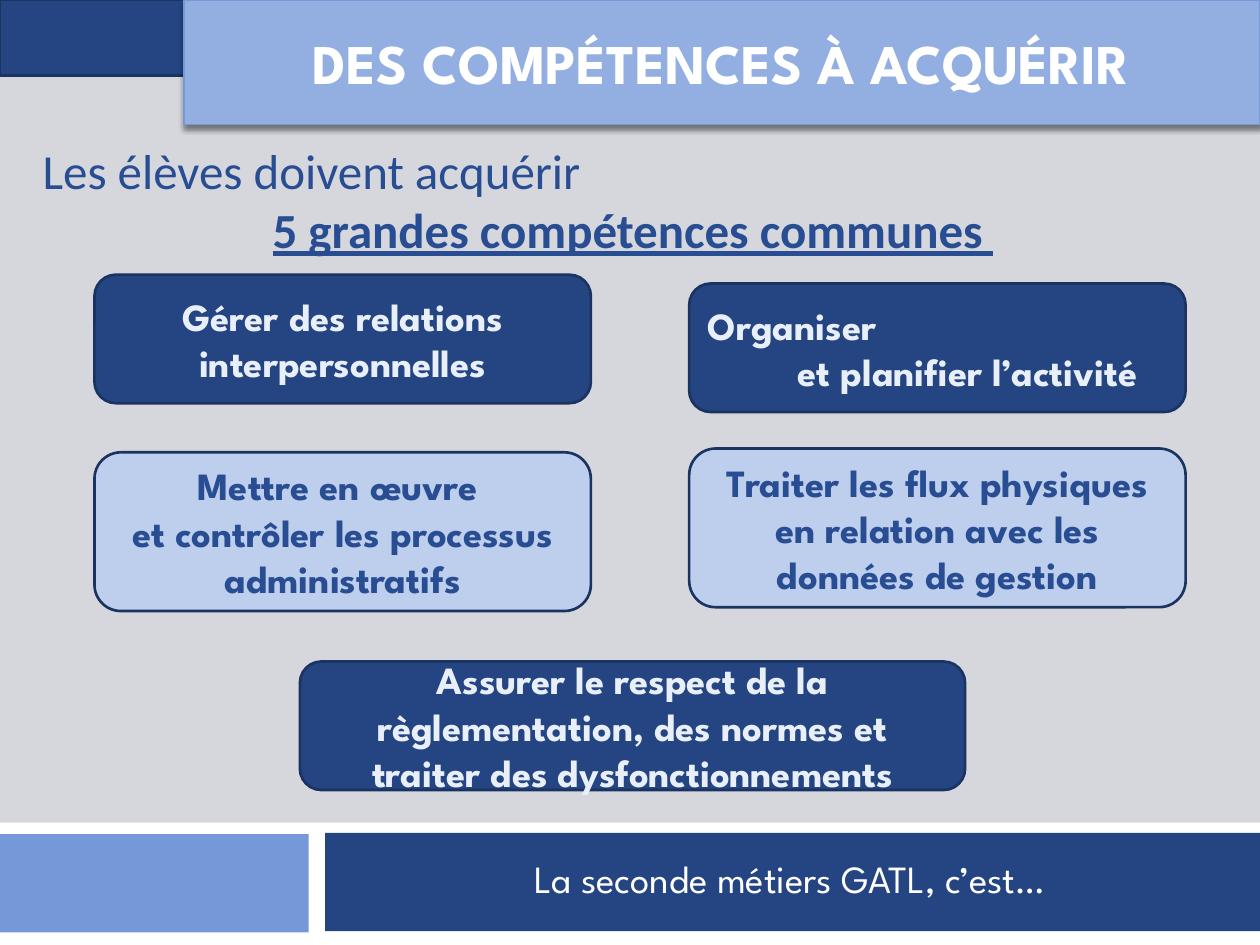
import pptx
import pptx.util
import pptx.dml.color
import pptx.enum.shapes
import pptx.enum.text
import pptx.oxml
import pptx.oxml.ns

Inches = pptx.util.Inches
Pt = pptx.util.Pt
RGBColor = pptx.dml.color.RGBColor
SHAPE = pptx.enum.shapes.MSO_SHAPE
ALIGN = pptx.enum.text.PP_ALIGN
ANCHOR = pptx.enum.text.MSO_ANCHOR
FIT = pptx.enum.text.MSO_AUTO_SIZE

GREY = RGBColor(0xD5, 0xD7, 0xDD)
WHITE = RGBColor(0xFF, 0xFF, 0xFF)
NAVY = RGBColor(0x24, 0x45, 0x82)
EDGE = RGBColor(0x1B, 0x33, 0x60)
SKY = RGBColor(0x75, 0x98, 0xD9)
LIGHT = RGBColor(0x93, 0xAF, 0xE1)
PALE = RGBColor(0xBE, 0xCE, 0xED)
INK = RGBColor(0x28, 0x4D, 0x92)
FROST = RGBColor(0xE9, 0xEF, 0xF9)

SPARTAN = "League Spartan"
TITLE = {"name": SPARTAN, "size": Pt(32), "bold": True, "color": WHITE}
LEAD = {"name": "Calibri", "size": Pt(28), "color": INK}
STRONG = {**LEAD, "bold": True, "underline": True}
SKILL = {"name": SPARTAN, "size": Pt(22), "bold": True}
FOOT = {"name": SPARTAN, "size": Pt(22), "color": WHITE}

SHADOW = (
    '<a:effectLst xmlns:a="http://schemas.openxmlformats.org/drawingml/2006/main">'
    '<a:outerShdw blurRad="38100" dist="30480" dir="5400000" rotWithShape="0">'
    '<a:srgbClr val="000000"><a:alpha val="45000"/></a:srgbClr>'
    "</a:outerShdw></a:effectLst>"
)


def add_box(slide, box, fill, line=None, width=1.5, kind=SHAPE.RECTANGLE):
    shape = slide.shapes.add_shape(kind, *map(Inches, box))
    shape.shadow.inherit = False
    shape.fill.solid()
    shape.fill.fore_color.rgb = fill
    if line is None:
        shape.line.fill.background()
    else:
        shape.line.color.rgb = line
        shape.line.width = Pt(width)
    return shape


def write(shape, lines, anchor=ANCHOR.MIDDLE):
    """Fill a shape with (text, font format, paragraph format) lines."""
    frame = shape.text_frame
    frame.word_wrap = True
    frame.vertical_anchor = anchor
    for i, (text, font, layout) in enumerate(lines):
        para = frame.add_paragraph() if i else frame.paragraphs[0]
        for key, value in {"alignment": ALIGN.CENTER, **layout}.items():
            if key == "indent":
                para._p.get_or_add_pPr().set("marL", str(value))
            else:
                setattr(para, key, value)
        run = para.add_run()
        run.text = text
        for key, value in font.items():
            if key == "color":
                run.font.color.rgb = value
            else:
                setattr(run.font, key, value)


def add_head(slide, box):
    left, top, width, height = box
    side = 1.46
    add_box(slide, (left, top, side, 0.6), NAVY, EDGE)
    banner = add_box(slide, (left + side, top, width - side, height),
                     LIGHT, SKY, 0.79)
    props = banner._element.spPr
    props.replace(props.find(pptx.oxml.ns.qn("a:effectLst")),
                  pptx.oxml.parse_xml(SHADOW))
    write(banner, [("DES COMPÉTENCES À ACQUÉRIR", TITLE, {})])


def add_lead(slide, box):
    text = slide.shapes.add_textbox(*map(Inches, box))
    write(text, [
        ("Les élèves doivent acquérir", LEAD,
         {"alignment": ALIGN.LEFT, "space_before": Pt(7)}),
        ("5 grandes compétences communes ", STRONG, {}),
    ])


def add_skills(slide, box):
    """Place two columns of skill boxes and a wide one below them."""
    left, top, width, height = box
    wide, low, tall = 3.94, 1.02, 1.26
    right = left + width - wide
    dark, pale = (NAVY, FROST), (PALE, INK)
    skills = [
        ((left, top, wide, low), dark,
         [("Gérer des relations interpersonnelles", {})]),
        ((right, top + 0.07, wide, low), dark,
         [("Organiser", {"alignment": ALIGN.LEFT}),
          ("et planifier l’activité", {"indent": Inches(0.48)})]),
        ((left, top + 1.41, wide, tall), pale,
         [("Mettre en œuvre ", {}),
          ("et contrôler les processus administratifs", {})]),
        ((right, top + 1.38, wide, tall), pale,
         [("Traiter les flux physiques en relation avec les données de gestion",
           {})]),
        ((left + 1.63, top + height - low, 5.28, low), dark,
         [("Assurer le respect de la règlementation, des normes et "
           "traiter des dysfonctionnements", {})]),
    ]
    for place, (fill, ink), lines in skills:
        shape = add_box(slide, place, fill, EDGE, kind=SHAPE.ROUNDED_RECTANGLE)
        font = {**SKILL, "color": ink}
        write(shape, [(text, font, layout) for text, layout in lines])


def add_foot(slide, box):
    left, top, width, height = box
    bar = 2.58
    add_box(slide, box, WHITE)
    add_box(slide, (left, top + 0.09, 2.45, 0.78), SKY)
    add_box(slide, (left + bar, top + 0.08, width - bar, 0.78), NAVY)
    text = slide.shapes.add_textbox(
        *map(Inches, (left + 2.72, top + 0.21, 7.09, 0.47)))
    write(text, [("La seconde métiers GATL, c’est…", FOOT, {})], ANCHOR.TOP)
    text.text_frame.auto_size = FIT.SHAPE_TO_FIT_TEXT


def main():
    deck = pptx.Presentation()
    deck.slide_width, deck.slide_height = Inches(10), Inches(7.5)
    slide = deck.slides.add_slide(deck.slide_layouts[6])
    slide.background.fill.solid()
    slide.background.fill.fore_color.rgb = GREY
    add_foot(slide, (0, 6.53, 10, 0.97))
    add_head(slide, (0, 0, 10, 0.99))
    add_lead(slide, (0.24, 1.15, 9.57, 0.87))
    add_skills(slide, (0.75, 2.18, 8.66, 4.09))
    deck.save("out.pptx")


if __name__ == "__main__":
    main()
